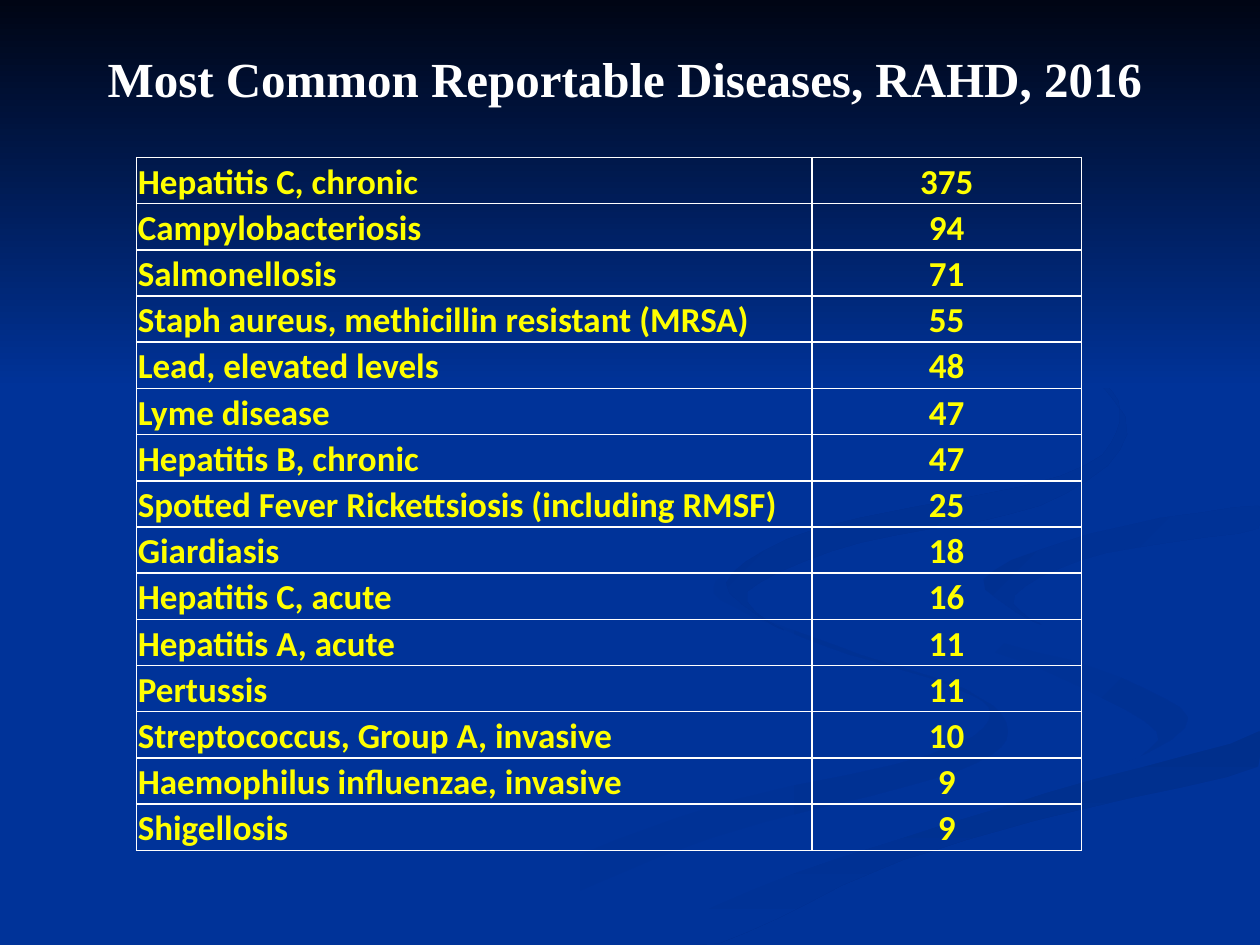
from pptx import Presentation
from pptx.dml.color import RGBColor
from pptx.enum.shapes import MSO_SHAPE
from pptx.enum.text import MSO_ANCHOR, PP_ALIGN
from pptx.util import Pt

WIDE, HIGH = 720, 540
STEPS = 5
BLUE = "003399"

WAVES = [
    (("003399", "003193", 0), [
        (552, 394), (491, 374), (428, 349), (414, 330), (412, 343),
        (471, 369), (541, 391), (566, 408), (532, 431), (388, 467),
        (216, 539), (260, 539), (406, 479), (544, 442), (576, 418)]),
    (("003399", "003193", 45), [
        (679, 410), (626, 382), (546, 359), (521, 334),
        (537, 360), (603, 386), (661, 418), (644, 436)]),
    (("002F8C", "003399", 90), [
        (362, 539), (411, 539), (500, 498), (591, 469),
        (719, 438), (719, 418), (598, 453), (454, 499)]),
    ((BLUE, BLUE, 0), [
        (522, 334), (546, 359), (627, 382), (679, 410), (642, 436), (507, 472),
        (343, 539), (362, 539), (454, 499), (598, 453), (719, 418), (719, 387),
        (624, 366), (562, 333), (612, 307), (719, 289), (719, 279), (598, 299)]),
    (("003091", "003399", 45), [
        (562, 331), (595, 357), (580, 340), (632, 316),
        (719, 302), (719, 289), (623, 305)]),
    (("002F8E", "003399", 45), [
        (492, 310), (594, 289), (644, 248), (607, 198), (549, 168), (621, 210),
        (640, 241), (606, 272), (467, 302), (415, 333), (448, 360), (427, 338)]),
]

CASES = [
    ("Hepatitis C, chronic", 375),
    ("Campylobacteriosis", 94),
    ("Salmonellosis", 71),
    ("Staph aureus, methicillin resistant (MRSA)", 55),
    ("Lead, elevated levels", 48),
    ("Lyme disease", 47),
    ("Hepatitis B, chronic", 47),
    ("Spotted Fever Rickettsiosis (including RMSF)", 25),
    ("Giardiasis", 18),
    ("Hepatitis C, acute", 16),
    ("Hepatitis A, acute", 11),
    ("Pertussis", 11),
    ("Streptococcus, Group A, invasive", 10),
    ("Haemophilus influenzae, invasive", 9),
    ("Shigellosis", 9),
]


def color(code):
    """Turn a hex string into a colour."""
    return RGBColor.from_string(code)


def paint(shape, start, end, angle):
    """Fill a shape with a clockwise gradient, or a solid if both ends match."""
    shape.shadow.inherit = False
    shape.line.fill.background()
    if start == end:
        shape.fill.solid()
        shape.fill.fore_color.rgb = color(start)
        return
    shape.fill.gradient()
    shape.fill.gradient_angle = -angle % 360
    for stop, code in zip(shape.fill.gradient_stops, (start, end)):
        stop.color.rgb = color(code)


def blend(a, b, c, d, t):
    """Return the Catmull-Rom value between b and c."""
    return b + t / 2 * (c - a + t * (2 * a - 5 * b + 4 * c - d + t * (3 * (b - c) + d - a)))


def smooth(points):
    """Round a closed outline, kept inside the slide."""
    curve = []
    for i in range(len(points)):
        near = [points[(i + k) % len(points)] for k in (-1, 0, 1, 2)]
        for step in range(STEPS):
            x, y = (blend(*axis, step / STEPS) for axis in zip(*near))
            curve.append((min(x, WIDE), min(y, HIGH)))
    return curve


def add_wave(slide, shade, points):
    """Draw one closed ribbon of the backdrop."""
    first, *rest = smooth(points)
    pen = slide.shapes.build_freeform(*first, scale=Pt(1))
    pen.add_line_segments(rest, close=True)
    paint(pen.convert_to_shape(), *shade)


def add_sky(slide):
    """Draw the dark band that fades down from the top."""
    sky = slide.shapes.add_shape(MSO_SHAPE.RECTANGLE, 0, 0, Pt(WIDE), Pt(222))
    paint(sky, "000514", BLUE, 90)


def style(frame, face, size, code, align):
    """Format the first paragraph of a text frame in bold."""
    line = frame.paragraphs[0]
    line.alignment = align
    font = line.runs[0].font
    font.name, font.size, font.bold = face, Pt(size), True
    font.color.rgb = color(code)


def add_title(slide, text):
    """Add the centred heading."""
    box = slide.shapes.add_textbox(Pt(36), Pt(24), Pt(642), Pt(41))
    frame = box.text_frame
    frame.word_wrap = True
    frame.text = text
    style(frame, "Times New Roman", 28, "FFFFFF", PP_ALIGN.CENTER)


def fill_cell(cell, value, align):
    """Write one table cell without a fill."""
    cell.fill.background()
    cell.vertical_anchor = MSO_ANCHOR.BOTTOM
    cell.margin_left = cell.margin_right = cell.margin_top = Pt(0.75)
    cell.margin_bottom = 0
    cell.text_frame.text = str(value)
    style(cell.text_frame, "Calibri", 20, "FFFF00", align)


def add_cases(slide):
    """Add the table of diseases and counts."""
    frame = slide.shapes.add_table(len(CASES), 2, Pt(78), Pt(90), Pt(540), Pt(396))
    table = frame.table
    table.first_row = table.horz_banding = False
    for column, width in zip(table.columns, (386, 154)):
        column.width = Pt(width)
    for row, case in zip(table.rows, CASES):
        row.height = Pt(26.4)
        for cell, value, align in zip(row.cells, case, (PP_ALIGN.LEFT, PP_ALIGN.CENTER)):
            fill_cell(cell, value, align)


def main():
    """Build and save the slide."""
    deck = Presentation()
    deck.slide_width, deck.slide_height = Pt(WIDE), Pt(HIGH)
    slide = deck.slides.add_slide(deck.slide_layouts[6])
    slide.background.fill.solid()
    slide.background.fill.fore_color.rgb = color(BLUE)
    for shade, points in WAVES:
        add_wave(slide, shade, points)
    add_sky(slide)
    add_title(slide, "Most Common Reportable Diseases, RAHD, 2016")
    add_cases(slide)
    deck.save("out.pptx")


if __name__ == "__main__":
    main()
